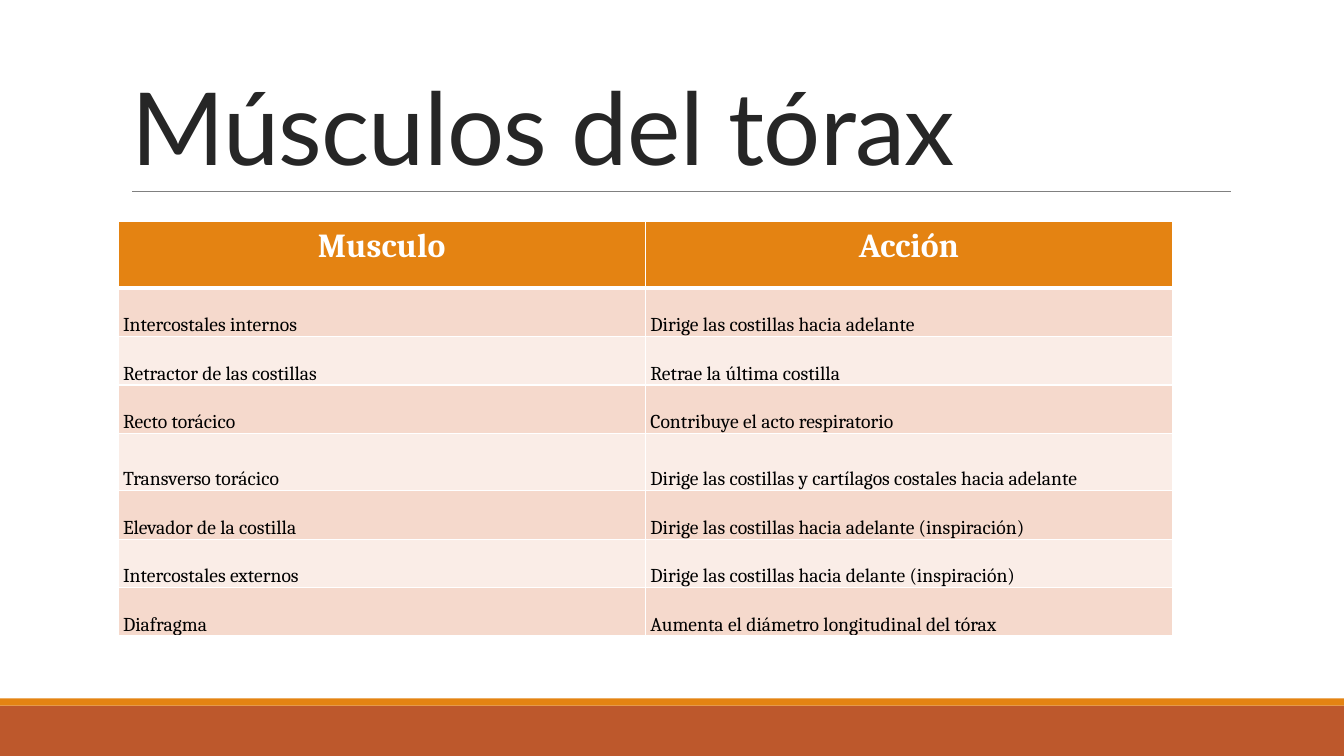
from lxml import etree
from pptx import Presentation
from pptx.dml.color import RGBColor
from pptx.enum.shapes import MSO_CONNECTOR, MSO_SHAPE
from pptx.enum.text import MSO_ANCHOR, MSO_AUTO_SIZE, PP_ALIGN
from pptx.oxml.ns import qn
from pptx.util import Inches, Pt

WHITE = RGBColor(0xFF, 0xFF, 0xFF)
BLACK = RGBColor(0x00, 0x00, 0x00)
TITLE_GRAY = RGBColor(0x26, 0x26, 0x26)
RULE_GRAY = RGBColor(0x80, 0x80, 0x80)
ORANGE = RGBColor(0xE4, 0x83, 0x12)
RUST = RGBColor(0xBD, 0x58, 0x2C)
BANDS = (RGBColor(0xF5, 0xD9, 0xCC), RGBColor(0xFA, 0xED, 0xE7))

SLIDE_WIDTH, SLIDE_HEIGHT = 13.33, 7.5
ROW_HEIGHTS = [0.66, 0.48, 0.48, 0.48, 0.57, 0.48, 0.48, 0.48]
MUSCLES = [
    ("Musculo", "Acción"),
    ("Intercostales internos", "Dirige las costillas hacia adelante"),
    ("Retractor de las costillas", "Retrae la última costilla"),
    ("Recto torácico", "Contribuye el acto respiratorio"),
    ("Transverso torácico", "Dirige las costillas y cartílagos costales hacia adelante"),
    ("Elevador de la costilla", "Dirige las costillas hacia adelante (inspiración)"),
    ("Intercostales externos", "Dirige las costillas hacia delante (inspiración)"),
    ("Diafragma", "Aumenta el diámetro longitudinal del tórax"),
]


def format_runs(paragraph, name, size, color, bold=False):
    for run in paragraph.runs:
        run.font.name = name
        run.font.size = Pt(size)
        run.font.bold = bold
        run.font.color.rgb = color


def add_footer_bands(slide, left, top, width, height):
    """Thin orange stripe above a rust band."""
    stripe = 0.07
    for offset, band_height, color in ((stripe, height - stripe, RUST), (0, stripe, ORANGE)):
        band = slide.shapes.add_shape(
            MSO_SHAPE.RECTANGLE, Inches(left), Inches(top + offset),
            Inches(width), Inches(band_height))
        band.shadow.inherit = False
        band.fill.solid()
        band.fill.fore_color.rgb = color
        band.line.fill.background()


def add_title(slide, left, top, width, height):
    """Title resting on a thin rule."""
    rule = slide.shapes.add_connector(
        MSO_CONNECTOR.STRAIGHT, Inches(left + 0.11), Inches(top + height),
        Inches(left + width + 0.01), Inches(top + height))
    rule.line.color.rgb = RULE_GRAY
    rule.line.width = Pt(0.5)
    etree.SubElement(rule._element.spPr, qn("a:effectLst"))

    title = slide.shapes.title
    title.left, title.top = Inches(left), Inches(top)
    title.width, title.height = Inches(width), Inches(height)
    text_frame = title.text_frame
    text_frame.text = "Músculos del tórax"
    text_frame.auto_size = MSO_AUTO_SIZE.NONE
    text_frame.vertical_anchor = MSO_ANCHOR.BOTTOM
    paragraph = text_frame.paragraphs[0]
    paragraph.alignment = PP_ALIGN.LEFT
    paragraph.line_spacing = 0.85
    format_runs(paragraph, "Lato", 72, TITLE_GRAY)
    paragraph.runs[0].font._element.set("spc", "-50")


def set_borders(cell, widths):
    """White borders, with widths in points for left, right, top and bottom."""
    properties = cell._tc.get_or_add_tcPr()
    for index, (side, width) in enumerate(zip("LRTB", widths)):
        line = etree.Element(qn(f"a:ln{side}"), w=str(Pt(width)))
        fill = etree.SubElement(line, qn("a:solidFill"))
        etree.SubElement(fill, qn("a:srgbClr"), val=str(WHITE))
        properties.insert(index, line)


def format_cell(cell, row):
    paragraph = cell.text_frame.paragraphs[0]
    cell.fill.solid()
    if row == 0:
        cell.fill.fore_color.rgb = ORANGE
        paragraph.alignment = PP_ALIGN.CENTER
        format_runs(paragraph, "Cambria", 24, WHITE, bold=True)
    else:
        cell.fill.fore_color.rgb = BANDS[(row - 1) % 2]
        cell.vertical_anchor = MSO_ANCHOR.BOTTOM
        cell.margin_left = cell.margin_right = Inches(0.05)
        cell.margin_top = cell.margin_bottom = 0
        paragraph.line_spacing = 1.07
        format_runs(paragraph, "Cambria", 14, BLACK)
    set_borders(cell, (1, 1, 3 if row == 1 else 1, 3 if row == 0 else 1))


def add_muscle_table(slide, left, top, width, height):
    table = slide.shapes.add_table(
        len(MUSCLES), 2, Inches(left), Inches(top), Inches(width), Inches(height)).table
    for row, (texts, row_height) in enumerate(zip(MUSCLES, ROW_HEIGHTS)):
        table.rows[row].height = Inches(row_height)
        for column, text in enumerate(texts):
            cell = table.cell(row, column)
            cell.text_frame.text = text
            format_cell(cell, row)


def main():
    presentation = Presentation()
    presentation.slide_width = Inches(SLIDE_WIDTH)
    presentation.slide_height = Inches(SLIDE_HEIGHT)
    slide = presentation.slides.add_slide(presentation.slide_layouts[5])
    slide.background.fill.solid()
    slide.background.fill.fore_color.rgb = WHITE
    add_footer_bands(slide, 0, 6.93, SLIDE_WIDTH, 0.57)
    add_title(slide, 1.2, 0.31, 11, 1.59)
    add_muscle_table(slide, 1.17, 2.2, 10.46, sum(ROW_HEIGHTS))
    presentation.save("out.pptx")


if __name__ == "__main__":
    main()
